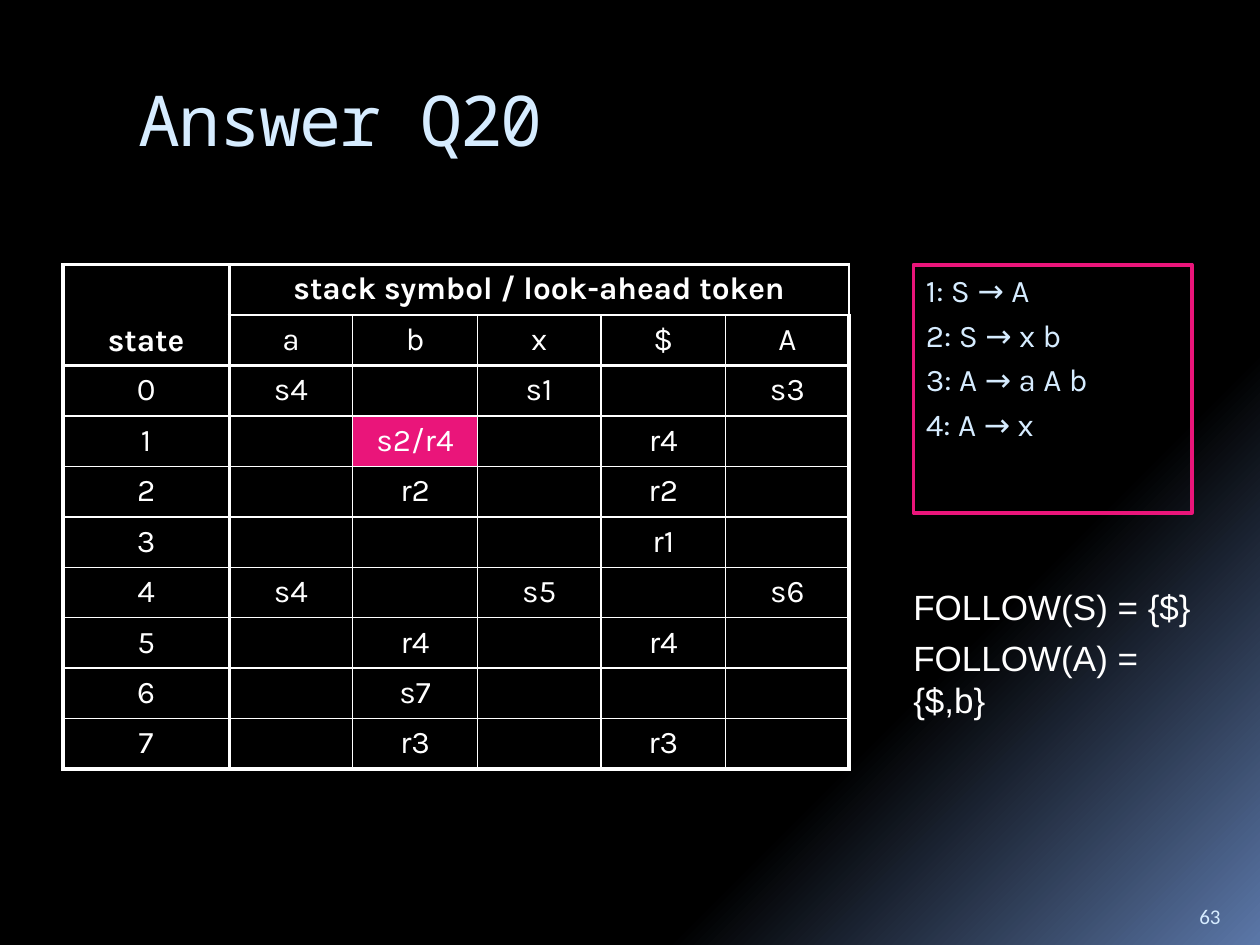
from copy import deepcopy

from lxml import etree
from pptx import Presentation
from pptx.dml.color import RGBColor
from pptx.enum.shapes import MSO_SHAPE
from pptx.enum.text import MSO_ANCHOR, PP_ALIGN
from pptx.oxml.ns import qn
from pptx.util import Inches, Pt

RECTANGLE = MSO_SHAPE.RECTANGLE
TOP, BOTTOM = MSO_ANCHOR.TOP, MSO_ANCHOR.BOTTOM
LEFT, CENTER = PP_ALIGN.LEFT, PP_ALIGN.CENTER
TITLE_ONLY = 5

COLORS = {"text": "FFFFFF", "pale": "D6ECFF", "accent": "EA157A",
          "night": "000000", "glow": "5B77A8"}
THIN, THICK = 1, 2.25
THICK_COLUMN_EDGES = {0, 1, 6}
THICK_ROW_EDGES = {0, 2, 10}

COLUMN_WIDTHS = [1.32, 0.98, 0.99, 0.98, 0.99, 0.98]
ROW_HEIGHT = 0.39
ACTION_ROWS = [
    ["state", "stack symbol / look-ahead token", "", "", "", ""],
    ["", "a", "b", "x", "$", "A"],
    ["0", "s4", "", "s1", "", "s3"],
    ["1", "", "s2/r4", "", "r4", ""],
    ["2", "", "r2", "", "r2", ""],
    ["3", "", "", "", "r1", ""],
    ["4", "s4", "", "s5", "", "s6"],
    ["5", "", "r4", "", "r4", ""],
    ["6", "", "s7", "", "", ""],
    ["7", "", "r3", "", "r3", ""],
]
CONFLICT = "s2/r4"
GRAMMAR = ["1: S → A", "2: S → x b", "3: A → a A b", "4: A → x"]
FOLLOW_SETS = ["FOLLOW(S) = {$}", "FOLLOW(A) = {$,b}"]


def rgb(name):
    return RGBColor.from_string(COLORS[name])


class SlideBuilder:
    def __init__(self, slide):
        self.slide = slide

    def background(self, stops, angle):
        """Fill with a linear gradient; stops are (position, colour name)."""
        fill = self.slide.background.fill
        fill.gradient()
        fill.gradient_angle = angle
        stop_list = next(self.slide.element.iter(qn("a:gsLst")))
        while len(stop_list) < len(stops):
            stop_list.append(deepcopy(stop_list[0]))
        for stop, (position, color) in zip(fill.gradient_stops, stops):
            stop.position = position
            stop.color.rgb = rgb(color)

    def set_lines(self, frame, lines, font, size, color, align=LEFT,
                  anchor=TOP, space=0, bold=False):
        frame.word_wrap = True
        frame.vertical_anchor = anchor
        for index, line in enumerate(lines):
            para = frame.add_paragraph() if index else frame.paragraphs[0]
            para.text = line
            para.alignment = align
            para.space_before = Pt(space)
            para.font.name = font
            para.font.size = Pt(size)
            para.font.bold = bold
            para.font.color.rgb = rgb(color)

    def title(self, text, left, top, width, height):
        title = self.slide.shapes.title
        title.left, title.top = Inches(left), Inches(top)
        title.width, title.height = Inches(width), Inches(height)
        self.set_lines(title.text_frame, [text], "Noto Sans Mono", 40, "pale")
        span = title.text_frame.paragraphs[0].runs[0]
        span._r.get_or_add_rPr().set("spc", "-100")

    def text(self, lines, left, top, width, height, **style):
        box = self.slide.shapes.add_textbox(
            Inches(left), Inches(top), Inches(width), Inches(height))
        self.set_lines(box.text_frame, lines, **style)

    def framed_text(self, lines, left, top, width, height, **style):
        box = self.slide.shapes.add_shape(
            RECTANGLE, Inches(left), Inches(top), Inches(width), Inches(height))
        box.shadow.inherit = False
        box.fill.background()
        box.line.color.rgb = rgb("accent")
        box.line.width = Pt(THICK)
        self.set_lines(box.text_frame, lines, **style)

    def borders(self, cell, widths):
        """Draw the cell's edges; widths are points for L, R, T and B."""
        properties = cell._tc.get_or_add_tcPr()
        for side, width in zip("LRTB", widths):
            line = etree.SubElement(properties, qn(f"a:ln{side}"), w=str(Pt(width)))
            solid = etree.SubElement(line, qn("a:solidFill"))
            etree.SubElement(solid, qn("a:srgbClr"), val=COLORS["text"])

    def action_table(self, rows, left, top):
        frame = self.slide.shapes.add_table(
            len(rows), len(COLUMN_WIDTHS), Inches(left), Inches(top),
            Inches(sum(COLUMN_WIDTHS)), Inches(ROW_HEIGHT * len(rows)))
        table = frame.table
        table.first_row = table.horz_banding = False
        for column, width in zip(table.columns, COLUMN_WIDTHS):
            column.width = Inches(width)
        for row in table.rows:
            row.height = Inches(ROW_HEIGHT)
        table.cell(0, 0).merge(table.cell(1, 0))
        table.cell(0, 1).merge(table.cell(0, 5))

        for r, row in enumerate(rows):
            for c, text in enumerate(row):
                cell = table.cell(r, c)
                self.set_lines(cell.text_frame, [text], "Karla", 18, "text",
                               align=CENTER, bold=r == 0)
                cell.vertical_anchor = BOTTOM if (r, c) == (0, 0) else TOP
                widths = [THICK if edge in THICK_COLUMN_EDGES else THIN
                          for edge in (c, c + 1)]
                widths += [THICK if edge in THICK_ROW_EDGES else THIN
                           for edge in (r, r + 1)]
                self.borders(cell, widths)
                if text == CONFLICT:
                    cell.fill.solid()
                    cell.fill.fore_color.rgb = rgb("accent")
                else:
                    cell.fill.background()


def main():
    deck = Presentation()
    deck.slide_width, deck.slide_height = Inches(10), Inches(7.5)
    page = SlideBuilder(deck.slides.add_slide(deck.slide_layouts[TITLE_ONLY]))

    page.background([(0.65, "night"), (0.73, "night"), (1, "glow")], angle=315)
    page.text(["63"], 9.42, 7.02, 0.5, 0.4, font="Calibri", size=12,
              color="pale", anchor=BOTTOM)
    page.title("Answer Q20", 1, 0.56, 8.5, 1)
    page.action_table(ACTION_ROWS, 0.5, 2.1)
    page.framed_text(GRAMMAR, 7.25, 2.1, 2.21, 1.97, font="Karla", size=18,
                     color="pale", space=4)
    page.text(FOLLOW_SETS, 7.15, 4.6, 2.63, 0.83, font="Arial", size=20,
              color="text", space=5)
    deck.save("out.pptx")


if __name__ == "__main__":
    main()
